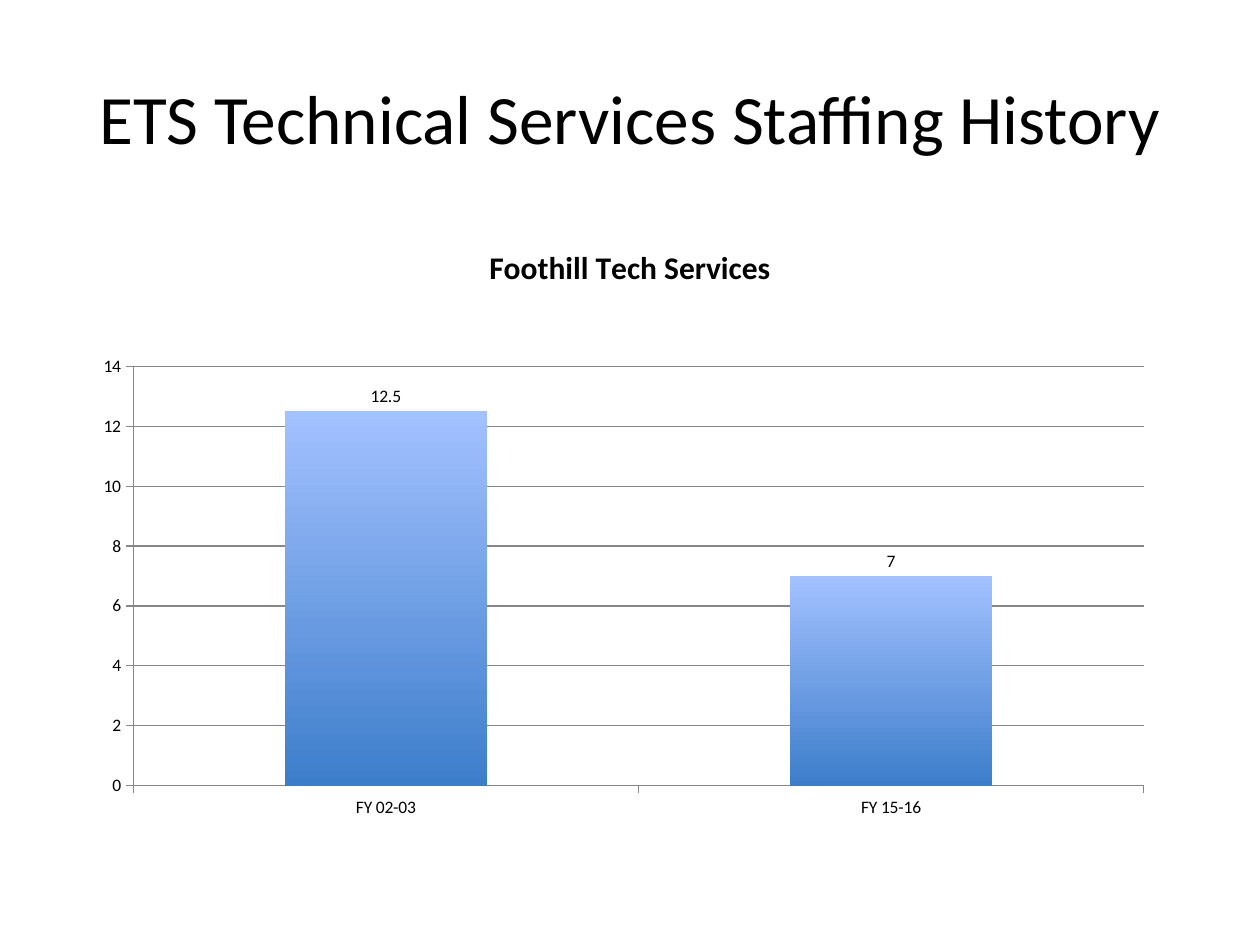
from lxml import etree
from pptx import Presentation
from pptx.chart.data import CategoryChartData
from pptx.dml.color import RGBColor
from pptx.enum.chart import XL_CHART_TYPE, XL_LABEL_POSITION, XL_TICK_MARK
from pptx.enum.text import MSO_ANCHOR, MSO_AUTO_SIZE, PP_ALIGN
from pptx.oxml.ns import qn
from pptx.util import Cm, Pt

BLACK = RGBColor(0x00, 0x00, 0x00)
GRID_GRAY = RGBColor(0x86, 0x86, 0x86)
BAR_BOTTOM = RGBColor(0x3D, 0x7E, 0xCB)
BAR_TOP = RGBColor(0xA3, 0xC1, 0xFF)
FONT = "Calibri"


def write_text(text_frame, text, size, bold=False, color=BLACK):
    text_frame.text = text
    paragraph = text_frame.paragraphs[0]
    paragraph.alignment = PP_ALIGN.CENTER
    font = paragraph.runs[0].font
    font.name, font.size, font.bold = FONT, Pt(size), bold
    font.color.rgb = color


presentation = Presentation()
presentation.slide_width = Cm(25.4)
presentation.slide_height = Cm(19.05)
slide = presentation.slides.add_slide(presentation.slide_layouts[5])

# Title
title = slide.shapes.title
title.left, title.top, title.width, title.height = Cm(1.27), Cm(0.76), Cm(22.86), Cm(3.18)
write_text(title.text_frame, "ETS Technical Services Staffing History", size=39.6)
title.text_frame.vertical_anchor = MSO_ANCHOR.MIDDLE
title.text_frame.auto_size = MSO_AUTO_SIZE.NONE

# Staffing chart
chart_data = CategoryChartData()
chart_data.categories = ["FY 02-03", "FY 15-16"]
chart_data.add_series("Foothill Tech Services", [12.5, 7])
chart = slide.shapes.add_chart(
    XL_CHART_TYPE.COLUMN_CLUSTERED, Cm(1.27), Cm(4.45), Cm(22.86), Cm(12.57), chart_data
).chart
chart.font.name, chart.font.size = FONT, Pt(10)
chart.font.color.rgb = BLACK
chart.has_legend = False
chart.has_title = True
write_text(chart.chart_title.text_frame, "Foothill Tech Services", size=18, bold=True)
chart.chart_title.include_in_layout = False

# Axes
value_axis = chart.value_axis
value_axis.minimum_scale, value_axis.maximum_scale, value_axis.major_unit = 0, 14, 2
value_axis.has_major_gridlines = True
for axis in (chart.category_axis, value_axis):
    axis.major_tick_mark = XL_TICK_MARK.OUTSIDE
    axis.minor_tick_mark = XL_TICK_MARK.NONE
for line in (
    chart.category_axis.format.line,
    value_axis.format.line,
    value_axis.major_gridlines.format.line,
):
    line.color.rgb = GRID_GRAY
    line.width = Pt(0.75)

# Columns and their labels
plot = chart.plots[0]
plot.gap_width = 150
plot.vary_by_categories = False
plot.has_data_labels = True
plot.data_labels.show_value = True
plot.data_labels.position = XL_LABEL_POSITION.OUTSIDE_END
fill = plot.series[0].format.fill
fill.gradient()
fill.gradient_angle = 90
for stop, color in zip(fill.gradient_stops, (BAR_BOTTOM, BAR_TOP)):
    stop.color.rgb = color

# Fixed inner plot area, as fractions of the chart
plot_area = chart.element.find(".//" + qn("c:plotArea"))
layout = plot_area.find(qn("c:layout"))
if layout is None:
    layout = etree.Element(qn("c:layout"))
    plot_area.insert(0, layout)
manual_layout = etree.SubElement(layout, qn("c:manualLayout"))
for name, value in (
    ("layoutTarget", "inner"), ("xMode", "edge"), ("yMode", "edge"),
    ("x", "0.062"), ("y", "0.234"), ("w", "0.891"), ("h", "0.672"),
):
    etree.SubElement(manual_layout, qn("c:" + name)).set("val", value)

presentation.save("out.pptx")
